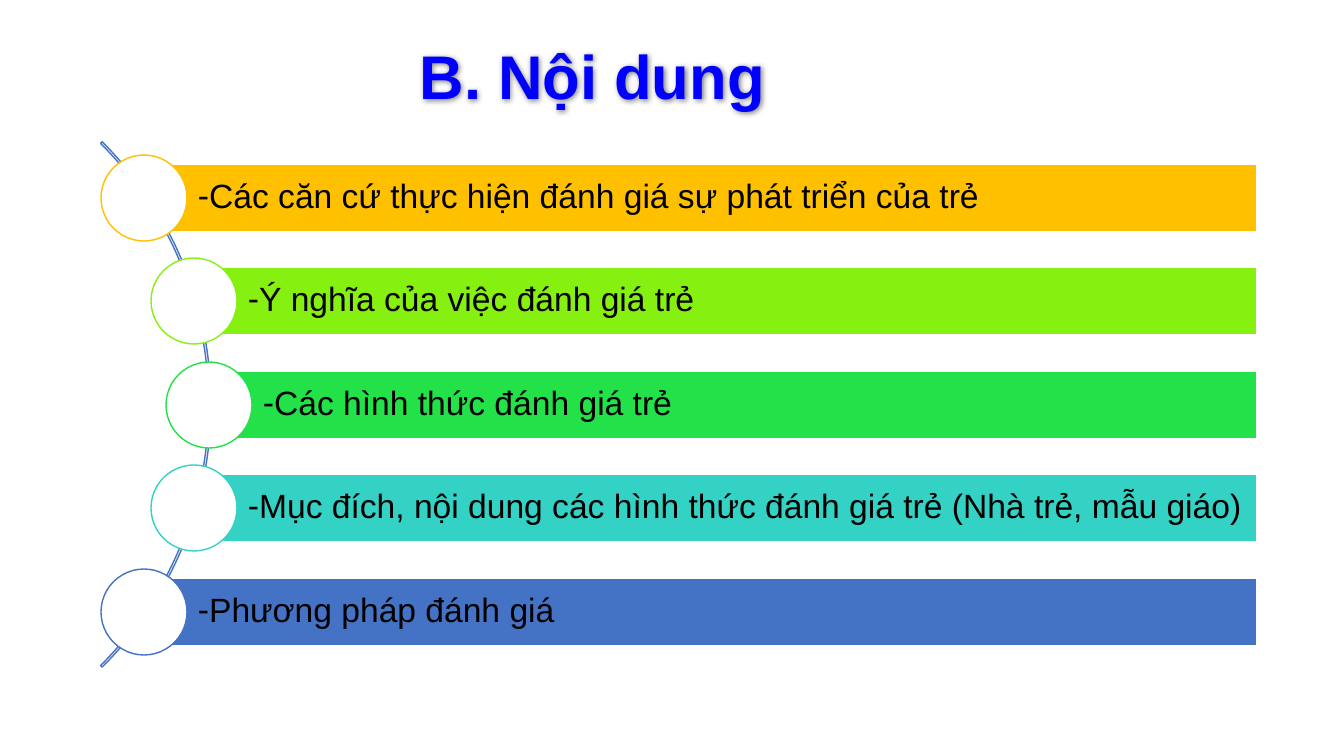
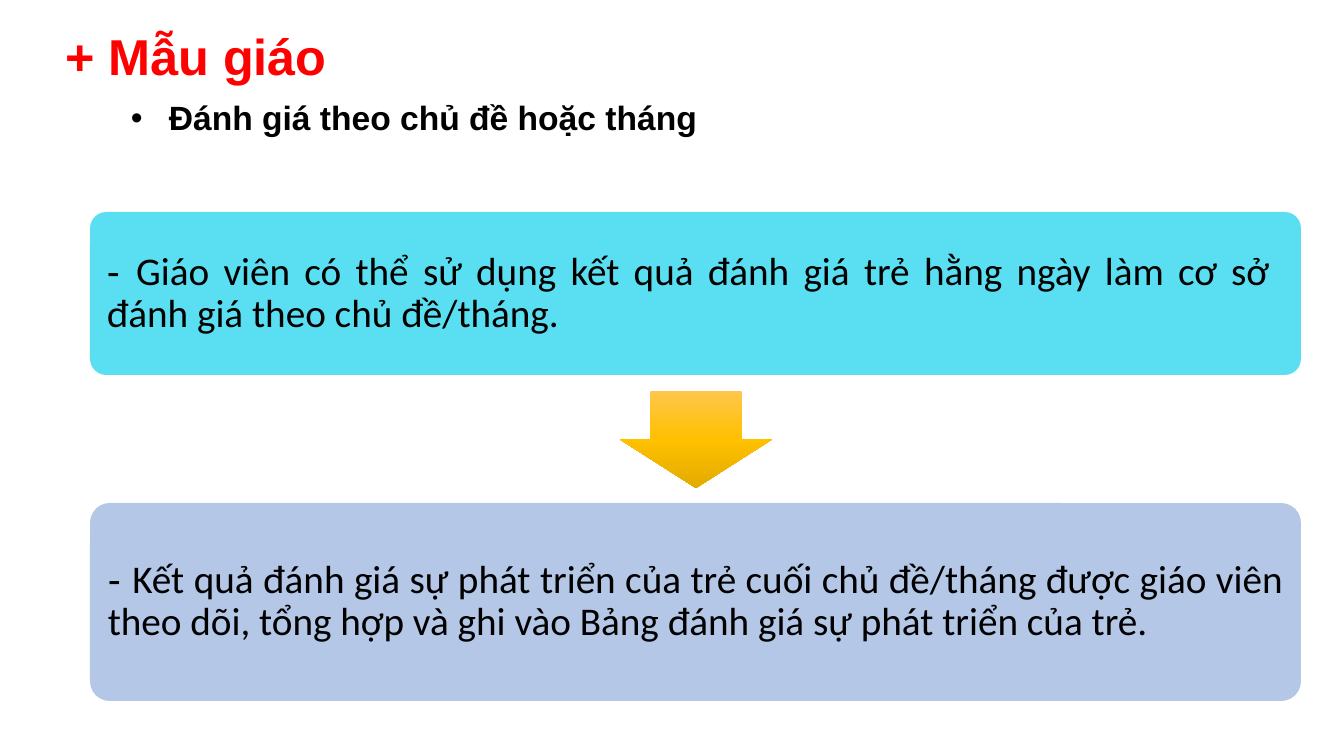
from lxml.etree import SubElement
from pptx import Presentation
from pptx.dml.color import RGBColor
from pptx.enum.shapes import MSO_SHAPE
from pptx.enum.text import MSO_ANCHOR, PP_ALIGN
from pptx.oxml import parse_xml
from pptx.oxml.ns import nsdecls, qn
from pptx.util import Emu, Pt

SCALE = 12192000 / 1344
BLACK = RGBColor(0x00, 0x00, 0x00)
WHITE = RGBColor(0xFF, 0xFF, 0xFF)
BLUE = RGBColor(0x00, 0x00, 0xFF)
RED = RGBColor(0xFF, 0x00, 0x00)
GOLD = RGBColor(0xFF, 0xC0, 0x00)
LIME = RGBColor(0x86, 0xF0, 0x11)
GREEN = RGBColor(0x23, 0xE1, 0x48)
TEAL = RGBColor(0x33, 0xD2, 0xC5)
STEEL = RGBColor(0x44, 0x72, 0xC4)
CYAN = RGBColor(0x59, 0xDF, 0xF1)
PALE_BLUE = RGBColor(0xB4, 0xC7, 0xE7)
GOLD_LIGHT = RGBColor(0xFF, 0xC6, 0x4B)
GOLD_DARK = RGBColor(0xE3, 0xAB, 0x00)
OUTLINE = RGBColor(0x50, 0x93, 0xCF)


def add_shape(slide, kind, box, fill=None, line=None, adjustments=()):
    shape = slide.shapes.add_shape(kind, *[Emu(round(value * SCALE)) for value in box])
    shape.shadow.inherit = False
    for index, value in enumerate(adjustments):
        shape.adjustments[index] = value
    for part, color in ((shape.fill, fill), (shape.line.fill, line)):
        if color is None:
            part.background()
        else:
            part.solid()
            part.fore_color.rgb = color
    if line is not None:
        shape.line.width = Pt(1)
    return shape


def write_text(shape, runs, size, color=BLACK, bold=False, align=PP_ALIGN.LEFT,
               insets=(10, 5, 10, 5), bullet=None, indent=0):
    frame = shape.text_frame
    frame.word_wrap = True
    frame.vertical_anchor = MSO_ANCHOR.MIDDLE
    for side, inset in zip(("left", "top", "right", "bottom"), insets):
        setattr(frame, f"margin_{side}", Emu(round(inset * SCALE)))
    paragraph = frame.paragraphs[0]
    paragraph.alignment = align
    paragraph.line_spacing = 0.9
    if bullet:
        properties = paragraph._p.get_or_add_pPr()
        properties.set("marL", str(round(indent * SCALE)))
        properties.set("indent", str(-round(indent * SCALE)))
        SubElement(properties, qn("a:buFont"), typeface="Arial")
        SubElement(properties, qn("a:buChar"), char=bullet)
    for text, font_name in runs:
        for number, line in enumerate(text.split("\n")):
            if number:
                paragraph.add_line_break()
            run = paragraph.add_run()
            run.text = line
            run.font.color.rgb = color
            for name, value in {"name": font_name, "size": Pt(size), "bold": bold}.items():
                setattr(run.font, name, value)
    return paragraph


presentation = Presentation()
presentation.slide_width = Emu(round(1344 * SCALE))
presentation.slide_height = Emu(round(756 * SCALE))
contents, kindergarten = [
    presentation.slides.add_slide(presentation.slide_layouts[6]) for _ in range(2)
]

headings = (
    (contents, (93, 40, 999, 79), "B. Nội dung", 44, BLUE, {}),
    (kindergarten, (18, 7, 356, 104), "+ Mẫu giáo", 36, RED, {}),
    (kindergarten, (113, 84, 602, 71), "Đánh giá theo chủ đề hoặc tháng", 24, BLACK,
     {"bullet": "•", "indent": 38}),
)
for slide, box, text, size, color, options in headings:
    heading = slide.shapes.add_textbox(*[Emu(round(value * SCALE)) for value in box])
    paragraph = write_text(heading, [(text, "Arial")], size, color, True,
                           PP_ALIGN.CENTER, **options)
    if slide is contents:
        paragraph.runs[0]._r.get_or_add_rPr().insert(0, parse_xml(
            f'<a:ln {nsdecls("a")} w="10541"><a:solidFill><a:srgbClr val="{OUTLINE}"/>'
            '</a:solidFill></a:ln>'))
        heading._element.spPr.append(parse_xml(
            f'<a:effectLst {nsdecls("a")}><a:outerShdw blurRad="50800" dist="0">'
            f'<a:srgbClr val="{BLACK}"><a:alpha val="50000"/></a:srgbClr>'
            '</a:outerShdw></a:effectLst>'))

add_shape(contents, MSO_SHAPE.BLOCK_ARC, (-532, 33, 743, 743), line=STEEL,
          adjustments=(189, 27, 0.003))

BAR_TOP, BAR_HEIGHT, BAR_RIGHT, CIRCLE = 164, 68, 1257, 86
topics = (
    ("Các căn cứ thực hiện đánh giá sự phát triển của trẻ", GOLD, 144),
    ("Ý nghĩa của việc đánh giá trẻ", LIME, 194),
    ("Các hình thức đánh giá trẻ", GREEN, 209),
    ("Mục đích, nội dung các hình thức đánh giá trẻ (Nhà trẻ, mẫu giáo)", TEAL, 194),
    ("Phương pháp đánh giá", STEEL, 144),
)
for index, (text, color, left) in enumerate(topics):
    top = BAR_TOP + index * 207 // 2
    bar = add_shape(contents, MSO_SHAPE.RECTANGLE,
                    (left, top, BAR_RIGHT - left, BAR_HEIGHT), color, WHITE)
    write_text(bar, [(text, "Arial")], 24, insets=(54, 7, 7, 7), bullet="-")
    add_shape(contents, MSO_SHAPE.OVAL,
              (left - CIRCLE // 2, top - (CIRCLE - BAR_HEIGHT) // 2, CIRCLE, CIRCLE),
              WHITE, color)

steps = (
    (212, 163, CYAN, "Giáo viên có thể sử dụng kết quả đánh giá trẻ hằng ngày làm cơ sở \n"
                     "đánh giá theo chủ đề/tháng."),
    (503, 198, PALE_BLUE, "Kết quả đánh giá sự phát triển của trẻ cuối chủ đề/tháng được giáo viên "
                          "theo dõi, tổng hợp và ghi vào Bảng đánh giá sự phát triển của trẻ."),
)
for top, height, color, text in steps:
    step = add_shape(kindergarten, MSO_SHAPE.ROUNDED_RECTANGLE, (90, top, 1211, height),
                     color, adjustments=(0.1,))
    write_text(step, [("- ", "Arial"), (text, "Calibri")], 28,
               align=PP_ALIGN.JUSTIFY, insets=(12, 12, 12, 12))

arrow = add_shape(kindergarten, MSO_SHAPE.DOWN_ARROW, (620, 391, 152, 97), GOLD,
                  adjustments=(0.6, 0.5))
stops = "".join(
    f'<a:gs pos="{position * 1000}"><a:srgbClr val="{color}"/></a:gs>'
    for position, color in ((0, GOLD_LIGHT), (50, GOLD), (100, GOLD_DARK))
)
arrow_properties = arrow._element.spPr
arrow_properties.replace(arrow_properties.find(qn("a:solidFill")), parse_xml(
    f'<a:gradFill {nsdecls("a")}><a:gsLst>{stops}</a:gsLst>'
    '<a:lin ang="5400000" scaled="0"/></a:gradFill>'))

presentation.save("out.pptx")
